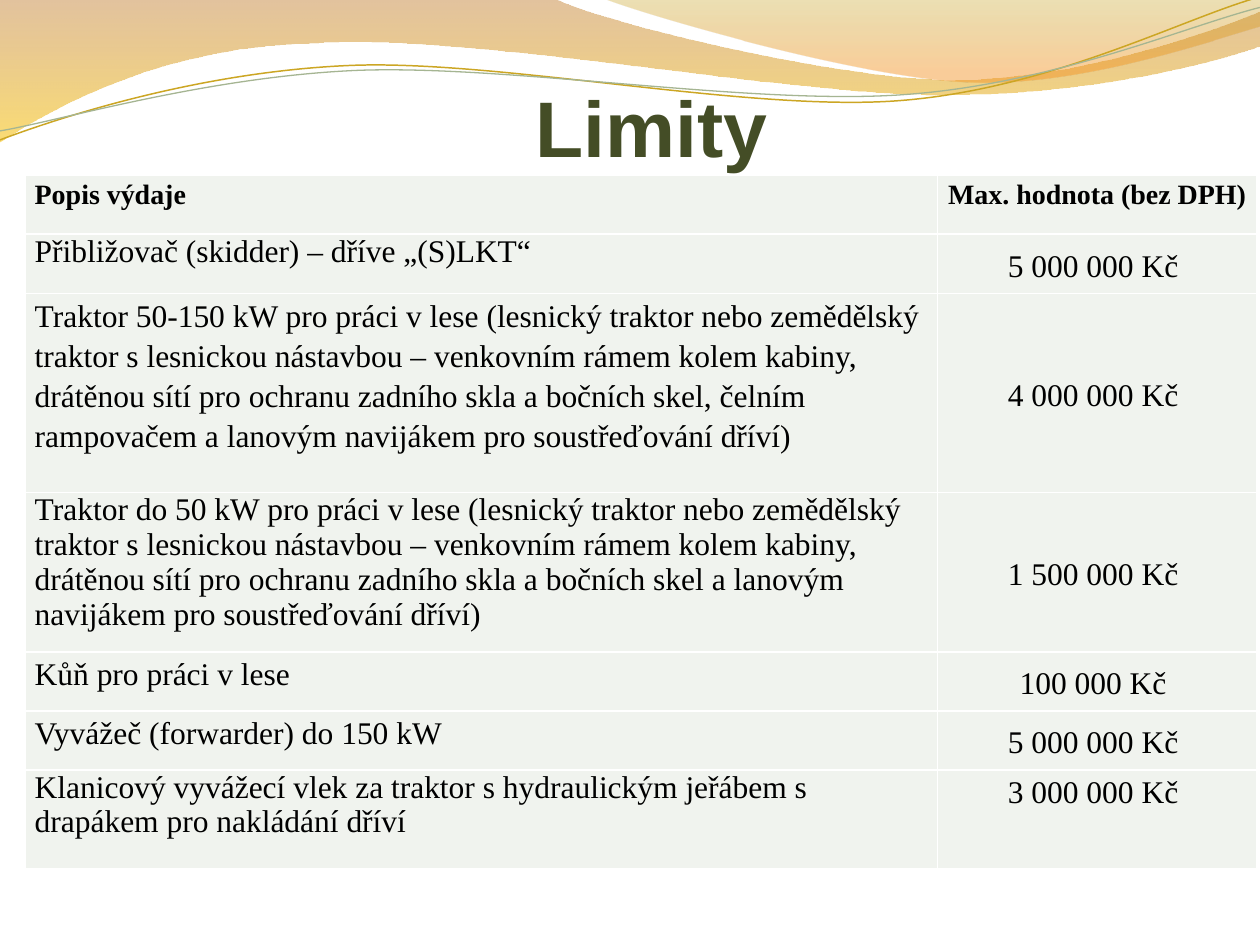
from dataclasses import dataclass
from math import cos, radians, sin

from lxml import etree
from pptx import Presentation
from pptx.dml.color import RGBColor
from pptx.enum.text import MSO_ANCHOR, MSO_AUTO_SIZE, PP_ALIGN
from pptx.oxml.ns import qn
from pptx.util import Cm, Pt

TOP, MIDDLE, BOTTOM = MSO_ANCHOR.TOP, MSO_ANCHOR.MIDDLE, MSO_ANCHOR.BOTTOM
LEFT, CENTER = PP_ALIGN.LEFT, PP_ALIGN.CENTER
NO_AUTOFIT = MSO_AUTO_SIZE.NONE

BLACK = RGBColor(0x00, 0x00, 0x00)
WHITE = RGBColor(0xFF, 0xFF, 0xFF)
OLIVE = RGBColor(0x44, 0x4D, 0x26)
CELL = RGBColor(0xF0, 0xF3, 0xEE)
BROWN = RGBColor(0xC0, 0x7A, 0x28)
YELLOW = RGBColor(0xF7, 0xBF, 0x00)
KHAKI = RGBColor(0xC0, 0x97, 0x09)
ORANGE = RGBColor(0xF5, 0x93, 0x20)
GOLD = RGBColor(0xCC, 0xA6, 0x24)
SAGE = RGBColor(0xA5, 0xB5, 0x92)

TILT = 2.7
BODY_FONT = "Times New Roman"
COL_WIDTHS = (18.39, 6.43)


@dataclass
class Stop:
    pos: float
    color: RGBColor
    opacity: int


@dataclass
class Band:
    start: tuple
    segments: list
    stops: tuple


@dataclass
class Strand:
    center: tuple
    start: tuple
    segments: list
    color: RGBColor
    width: float


@dataclass
class Row:
    text: str
    value: str
    height: float
    spacing: float = 1.15
    anchor: MSO_ANCHOR = MIDDLE
    size: int = 18
    bold: bool = False


BANDS = [
    Band((0, 0), [
        [(11.18, -0.03)],
        [(12.09, 0.43), (16.87, 1.6), (19.25, 1.6)],
        [(21.67, 1.6), (24.33, 0.66), (25.4, 0.23)],
        [(25.43, 0.91)],
        [(24.97, 1.12), (22.1, 1.93), (18.95, 1.91)],
        [(15.8, 1.91), (9.7, 0.71), (6.53, 0.86)],
        [(3.28, 0.91), (1.17, 2.11), (-0.03, 2.87)],
    ], (Stop(0, BROWN, 45), Stop(1, YELLOW, 55))),
    Band((12.17, -0.03), [
        [(12.93, 0.28), (17.32, 1.57), (19.53, 1.65)],
        [(21.74, 1.75), (24.41, 0.81), (25.4, 0.53)],
        [(25.4, 0)],
    ], (Stop(0, KHAKI, 30), Stop(0.8, ORANGE, 45))),
]

STRANDS = [
    Strand((12.67, 1.46), (0, 2.82), [
        [(1.22, 2.36), (4.01, 1.45), (7.04, 1.32)],
        [(10.03, 1.19), (15.06, 2.26), (18.11, 2.03)],
        [(21.16, 1.8), (23.83, 0.38), (25.35, -0.05)],
    ], GOLD, 0.85),
    Strand((12.69, 1.5), (0, 2.64), [
        [(1.19, 2.44), (4.17, 1.55), (7.19, 1.42)],
        [(10.24, 1.3), (15.16, 2.13), (18.21, 1.91)],
        [(21.23, 1.7), (23.9, 0.53), (25.4, 0.15)],
    ], SAGE, 0.75),
]

ROWS = [
    Row("Popis výdaje", "Max. hodnota (bez DPH) ", 1.19, anchor=TOP, size=16, bold=True),
    Row("Přibližovač (skidder) – dříve „(S)LKT“", "5 000 000 Kč ", 1.2, spacing=1.0),
    Row("Traktor 50-150 kW pro práci v lese (lesnický traktor nebo zemědělský "
        "traktor s lesnickou nástavbou – venkovním rámem kolem kabiny, drátěnou "
        "sítí pro ochranu zadního skla a bočních skel, čelním rampovačem a "
        "lanovým navijákem pro soustřeďování dříví)", "4 000 000 Kč ", 4.01),
    Row("Traktor do 50 kW pro práci v lese (lesnický traktor nebo zemědělský "
        "traktor s lesnickou nástavbou – venkovním rámem kolem kabiny, drátěnou "
        "sítí pro ochranu zadního skla a bočních skel a lanovým navijákem pro "
        "soustřeďování dříví)", "1 500 000 Kč ", 3.21, spacing=1.0),
    Row("Kůň pro práci v lese", "100 000 Kč ", 1.19),
    Row("Vyvážeč (forwarder) do 150 kW", "5 000 000 Kč ", 1.19),
    Row("Klanicový vyvážecí vlek za traktor s hydraulickým jeřábem s drapákem "
        "pro nakládání dříví", "3 000 000 Kč ", 1.99, spacing=1.0, anchor=TOP),
]


def turn(pt: tuple, center: tuple, degrees: float) -> tuple:
    a = radians(degrees)
    dx, dy = pt[0] - center[0], pt[1] - center[1]
    return center[0] + dx * cos(a) - dy * sin(a), center[1] + dx * sin(a) + dy * cos(a)


def draw_outline(s, start: tuple, segments: list, close: bool):
    pts = [(Cm(x), Cm(y)) for seg in segments for x, y in seg]
    builder = s.shapes.build_freeform(Cm(start[0]), Cm(start[1]))
    builder.add_line_segments(pts, close=close)
    sp = builder.convert_to_shape()
    sp.shadow.inherit = False
    steps = iter(list(sp._element.spPr.iter(qn("a:lnTo"))))
    for seg in segments:
        first, *others = [next(steps) for _ in seg]
        if others:
            curve = etree.Element(qn("a:cubicBezTo"))
            first.addprevious(curve)
            for step in (first, *others):
                curve.append(step[0])
                step.getparent().remove(step)
    return sp


def draw_band(s, band: Band) -> None:
    sp = draw_outline(s, band.start, band.segments, True)
    sp.line.fill.background()
    sp.fill.gradient()
    sp.fill.gradient_angle = 270
    for target, stop in zip(sp.fill.gradient_stops, band.stops):
        target.position = stop.pos
        target.color.rgb = stop.color
    for clr, stop in zip(sp._element.spPr.iter(qn("a:srgbClr")), band.stops):
        etree.SubElement(clr, qn("a:alpha"), val=str(stop.opacity * 1000))


def draw_strand(s, strand: Strand) -> None:
    start = turn(strand.start, strand.center, TILT)
    segments = [[turn(pt, strand.center, TILT) for pt in seg] for seg in strand.segments]
    sp = draw_outline(s, start, segments, False)
    sp.rotation = 360 - TILT
    sp.fill.background()
    sp.line.color.rgb = strand.color
    sp.line.width = Pt(strand.width)


def set_borders(cell, color: RGBColor, width: float) -> None:
    tc_pr = cell._tc.get_or_add_tcPr()
    for i, side in enumerate(("lnL", "lnR", "lnT", "lnB")):
        ln = etree.Element(qn(f"a:{side}"), w=str(Pt(width)))
        fill = etree.SubElement(ln, qn("a:solidFill"))
        etree.SubElement(fill, qn("a:srgbClr"), val=str(color))
        tc_pr.insert(i, ln)


def add_run(p, text: str, font: str, size: int, color: RGBColor, bold: bool) -> None:
    r = p.add_run()
    r.text = text
    r.font.name = font
    r.font.size = Pt(size)
    r.font.color.rgb = color
    r.font.bold = bold


def fill_cell(cell, text: str, row: Row, align: PP_ALIGN, spacing: float,
              anchor: MSO_ANCHOR) -> None:
    cell.fill.solid()
    cell.fill.fore_color.rgb = CELL
    set_borders(cell, WHITE, 1)
    cell.margin_left = cell.margin_right = Cm(0.19)
    cell.margin_top = cell.margin_bottom = 0
    cell.vertical_anchor = anchor
    p = cell.text_frame.paragraphs[0]
    p.alignment = align
    if spacing != 1:
        p.line_spacing = spacing
    add_run(p, text, BODY_FONT, row.size, BLACK, row.bold)


def draw_title(s, text: str) -> None:
    sp = s.shapes.title
    s.shapes._spTree.append(sp._element)
    sp.left, sp.top, sp.width, sp.height = Cm(1.7), Cm(1.33), Cm(22.86), Cm(2.16)
    tf = sp.text_frame
    tf.auto_size = NO_AUTOFIT
    tf.vertical_anchor = BOTTOM
    tf.margin_left = tf.margin_right = tf.margin_bottom = 0
    tf.margin_top = Cm(0.13)
    p = tf.paragraphs[0]
    p.alignment = CENTER
    add_run(p, text, "Arial", 45, OLIVE, True)


def draw_table(s, rows: list) -> None:
    frame = s.shapes.add_table(len(rows), len(COL_WIDTHS), Cm(0.51), Cm(3.53),
                               Cm(sum(COL_WIDTHS)), Cm(sum(r.height for r in rows)))
    table = frame.table
    table.horz_banding = False
    for col, width in zip(table.columns, COL_WIDTHS):
        col.width = Cm(width)
    for i, row in enumerate(rows):
        table.rows[i].height = Cm(row.height)
        fill_cell(table.cell(i, 0), row.text, row, LEFT, row.spacing, TOP)
        fill_cell(table.cell(i, 1), row.value, row, CENTER, 1.15, row.anchor)


prs = Presentation()
prs.slide_width, prs.slide_height = Cm(25.4), Cm(19.05)
s = prs.slides.add_slide(prs.slide_layouts[5])
for band in BANDS:
    draw_band(s, band)
for strand in STRANDS:
    draw_strand(s, strand)
draw_title(s, "Limity")
draw_table(s, ROWS)
prs.save("out.pptx")
